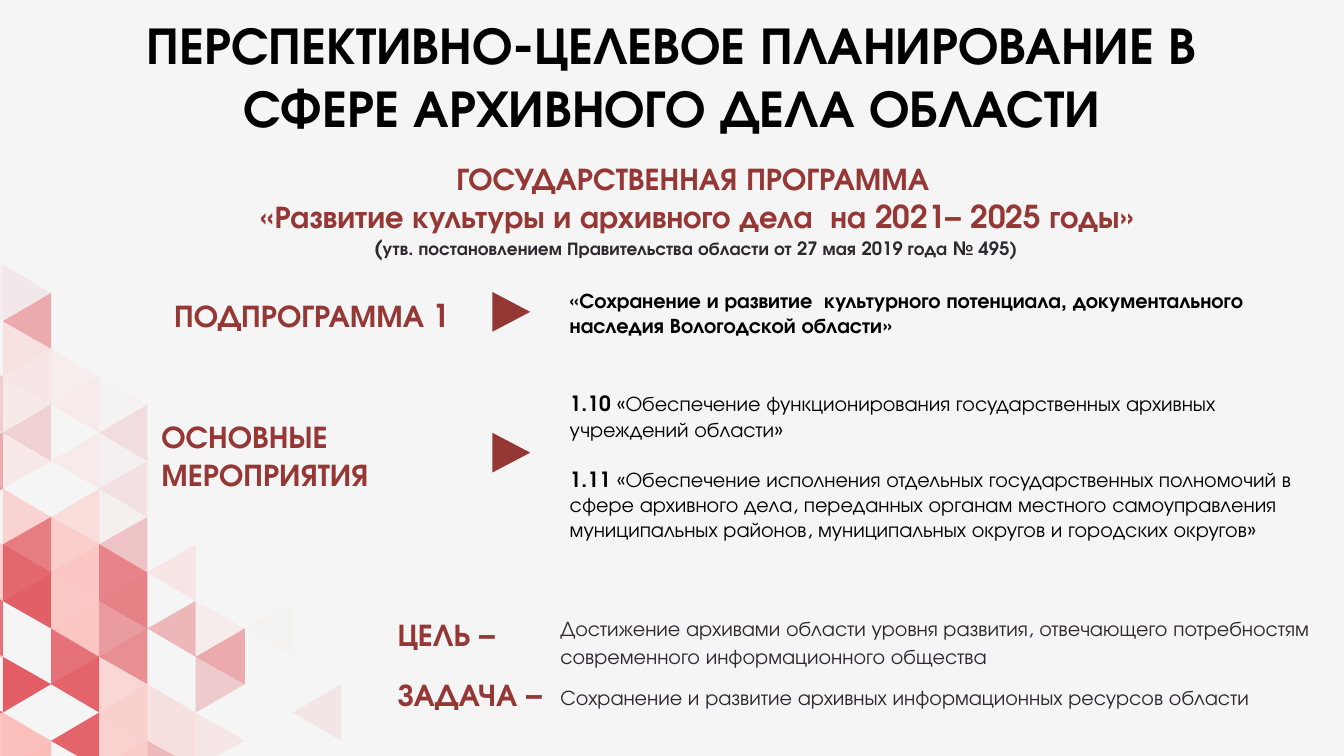
from dataclasses import dataclass, field
from typing import NamedTuple

from lxml import etree
from pptx import Presentation
from pptx.dml.color import RGBColor
from pptx.enum.shapes import MSO_SHAPE
from pptx.enum.text import MSO_ANCHOR, PP_ALIGN
from pptx.oxml.ns import qn
from pptx.util import Pt

PX = 9144  # EMU per px, 100 px to the inch
PAGE_WIDTH, PAGE_HEIGHT = 1422, 800
FONT = "TeX Gyre Adventor"

PAPER = RGBColor(0xF5, 0xF5, 0xF5)
RED = RGBColor(0xDB, 0x20, 0x29)
PINK = RGBColor(0xFF, 0xAB, 0xA6)
MAROON = RGBColor(0x95, 0x37, 0x35)
BLACK = RGBColor(0x00, 0x00, 0x00)
GRAPHITE = RGBColor(0x2C, 0x28, 0x30)

LEFT, CENTER = PP_ALIGN.LEFT, PP_ALIGN.CENTER
TOP, MIDDLE = MSO_ANCHOR.TOP, MSO_ANCHOR.MIDDLE
TRIANGLE = MSO_SHAPE.ISOSCELES_TRIANGLE

# Triangle lattice: left edge of column 0, top of row 0 and the steps
LATTICE_LEFT, LATTICE_TOP = 2.6, 280.3
COLUMN_STEP, ROW_STEP = 51.2, 29.6


class Point(NamedTuple):
    x: float
    y: float


class Span(NamedTuple):
    text: str
    size: int
    color: RGBColor
    bold: bool = True


@dataclass
class Para:
    spans: list[Span]
    align: PP_ALIGN = LEFT
    line_spacing: float = 1.0
    space_before: int = 0


@dataclass
class TextBox:
    left: int
    top: int
    width: int
    height: int
    paras: list[Para]
    anchor: MSO_ANCHOR = MIDDLE
    inset_x: int = 10
    inset_y: int = 5


@dataclass
class TileColumn:
    """Opacity in percent by lattice row, for each tile colour."""
    column: int
    red: dict[int, int] = field(default_factory=dict)
    pink: dict[int, int] = field(default_factory=dict)


TILE_COLUMNS = [
    TileColumn(-1, red={3: 20, 4: 18, 6: 34, 7: 41, 11: 63, 12: 61, 15: 68},
               pink={0: 9, 5: 22, 9: 48, 10: 52, 13: 63, 16: 64}),
    TileColumn(0, red={0: 6, 1: 35, 5: 16, 9: 56, 10: 66, 11: 70, 14: 71},
               pink={2: 25, 3: 18, 4: 14, 6: 16, 8: 45, 16: 71, 17: 77}),
    TileColumn(1, red={13: 61, 14: 68, 16: 68},
               pink={3: 10, 4: 13, 6: 13, 8: 32, 9: 52, 10: 62, 11: 59, 12: 64}),
    TileColumn(2, red={5: 11, 7: 9, 9: 23, 10: 53, 11: 54, 12: 42, 13: 48},
               pink={4: 3, 6: 7, 8: 8, 14: 40, 15: 49, 16: 47, 17: 55}),
    TileColumn(3, red={12: 29, 17: 28}, pink={10: 20, 15: 26, 16: 29}),
    TileColumn(4, red={13: 35, 14: 20}, pink={12: 11, 16: 19}),
    TileColumn(5, pink={12: 3}),
    TileColumn(6, red={15: 7}),
]


def heading(text: str, align: PP_ALIGN = LEFT) -> Para:
    return Para([Span(text, 24, MAROON)], align)


def measure(number: str, text: str, space_before: int = 0) -> Para:
    return Para([Span(number, 16, BLACK), Span(text, 16, BLACK, False)],
                space_before=space_before)


def statement(text: str) -> Para:
    return Para([Span(text, 16, GRAPHITE, False)], line_spacing=1.1, space_before=10)


TEXT_BOXES = [
    TextBox(119, 13, 1184, 145, [
        Para([Span("ПЕРСПЕКТИВНО-ЦЕЛЕВОЕ ПЛАНИРОВАНИЕ В СФЕРЕ АРХИВНОГО ДЕЛА ОБЛАСТИ",
                   40, BLACK)], CENTER),
    ], TOP, 0, 0),
    TextBox(182, 169, 1102, 106, [
        heading("ГОСУДАРСТВЕННАЯ ПРОГРАММА", CENTER),
        heading(" «Развитие культуры и архивного дела  на 2021– 2025 годы»", CENTER),
        Para([Span(" (", 16, GRAPHITE),
              Span("утв. постановлением Правительства области от 27 мая 2019 года № 495)",
                   14, GRAPHITE)], CENTER),
    ]),
    TextBox(161, 299, 339, 69, [heading("ПОДПРОГРАММА 1", CENTER)]),
    TextBox(593, 296, 743, 69, [
        Para([Span("«Сохранение и развитие  культурного потенциала, документального "
                   "наследия Вологодской области»", 16, BLACK)]),
    ]),
    TextBox(161, 447, 339, 69, [heading("ОСНОВНЫЕ МЕРОПРИЯТИЯ")]),
    TextBox(593, 381, 827, 225, [
        measure("1.10", " «Обеспечение функционирования государственных архивных "
                "учреждений области»"),
        measure("1.11", " «Обеспечение исполнения отдельных государственных полномочий "
                "в сфере архивного дела, переданных органам местного самоуправления "
                "муниципальных районов, муниципальных округов и городских округов»", 19),
    ]),
    TextBox(583, 608, 839, 184, [
        statement("Достижение архивами области уровня развития, отвечающего "
                  "потребностям современного информационного общества"),
        statement("Сохранение и развитие архивных информационных ресурсов области"),
    ]),
    TextBox(411, 636, 143, 69, [heading("ЦЕЛЬ –")]),
    TextBox(411, 700, 186, 69, [heading("ЗАДАЧА –")]),
]

ARROW_TOPS = [310, 459]


def clip(points: list[Point], axis: int, limit: int, sign: int) -> list[Point]:
    """Keep the part of a polygon where sign * (coordinate - limit) >= 0."""
    kept = []
    for start, end in zip(points, points[1:] + points[:1]):
        start_gap = sign * (start[axis] - limit)
        end_gap = sign * (end[axis] - limit)
        if start_gap >= 0:
            kept.append(start)
        if start_gap * end_gap < 0:
            share = start_gap / (start_gap - end_gap)
            kept.append(Point(start.x + share * (end.x - start.x),
                              start.y + share * (end.y - start.y)))
    return kept


def tile_outline(column: int, row: int) -> list[Point]:
    """Tiles point right where column + row is even, otherwise left."""
    left = LATTICE_LEFT + column * COLUMN_STEP
    right = left + COLUMN_STEP
    base, tip = (left, right) if (column + row) % 2 == 0 else (right, left)
    top = LATTICE_TOP + row * ROW_STEP
    triangle = [Point(base, top), Point(tip, top + ROW_STEP), Point(base, top + 2 * ROW_STEP)]
    return clip(clip(triangle, 0, 0, 1), 1, PAGE_HEIGHT, -1)


def draw_tile(shapes, column: int, row: int, color: RGBColor, opacity: int) -> None:
    points = [(round(point.x), round(point.y)) for point in tile_outline(column, row)]
    builder = shapes.build_freeform(*points[0], scale=PX)
    builder.add_line_segments(points[1:], close=True)
    tile = builder.convert_to_shape()
    fill_plain(tile, color)
    color_node = tile.element.spPr.find(qn("a:solidFill"))[0]
    etree.SubElement(color_node, qn("a:alpha"), val=str(opacity * 1000))


def fill_plain(shape, color: RGBColor) -> None:
    shape.shadow.inherit = False
    shape.fill.solid()
    shape.fill.fore_color.rgb = color
    shape.line.fill.background()


def draw_arrow(shapes, top: int) -> None:
    arrow = shapes.add_shape(TRIANGLE, 520 * PX, top * PX, 42 * PX, 40 * PX)
    arrow.rotation = 90
    fill_plain(arrow, MAROON)


def draw_text(shapes, box: TextBox) -> None:
    frame = shapes.add_textbox(box.left * PX, box.top * PX,
                               box.width * PX, box.height * PX).text_frame
    frame.word_wrap = True
    frame.vertical_anchor = box.anchor
    frame.margin_left = frame.margin_right = box.inset_x * PX
    frame.margin_top = frame.margin_bottom = box.inset_y * PX
    for index, para in enumerate(box.paras):
        paragraph = frame.add_paragraph() if index else frame.paragraphs[0]
        paragraph.alignment = para.align
        paragraph.line_spacing = para.line_spacing
        paragraph.space_before = Pt(para.space_before)
        for span in para.spans:
            run = paragraph.add_run()
            run.text = span.text
            run.font.name = FONT
            run.font.size = Pt(span.size)
            run.font.bold = span.bold
            run.font.color.rgb = span.color


def main() -> None:
    deck = Presentation()
    deck.slide_width, deck.slide_height = PAGE_WIDTH * PX, PAGE_HEIGHT * PX
    page = deck.slides.add_slide(deck.slide_layouts[6])
    page.background.fill.solid()
    page.background.fill.fore_color.rgb = PAPER
    mosaic = page.shapes.add_group_shape().shapes
    for strip in TILE_COLUMNS:
        for color, opacities in ((RED, strip.red), (PINK, strip.pink)):
            for row, opacity in opacities.items():
                draw_tile(mosaic, strip.column, row, color, opacity)
    for top in ARROW_TOPS:
        draw_arrow(page.shapes, top)
    for box in TEXT_BOXES:
        draw_text(page.shapes, box)
    deck.save("out.pptx")


if __name__ == "__main__":
    main()
